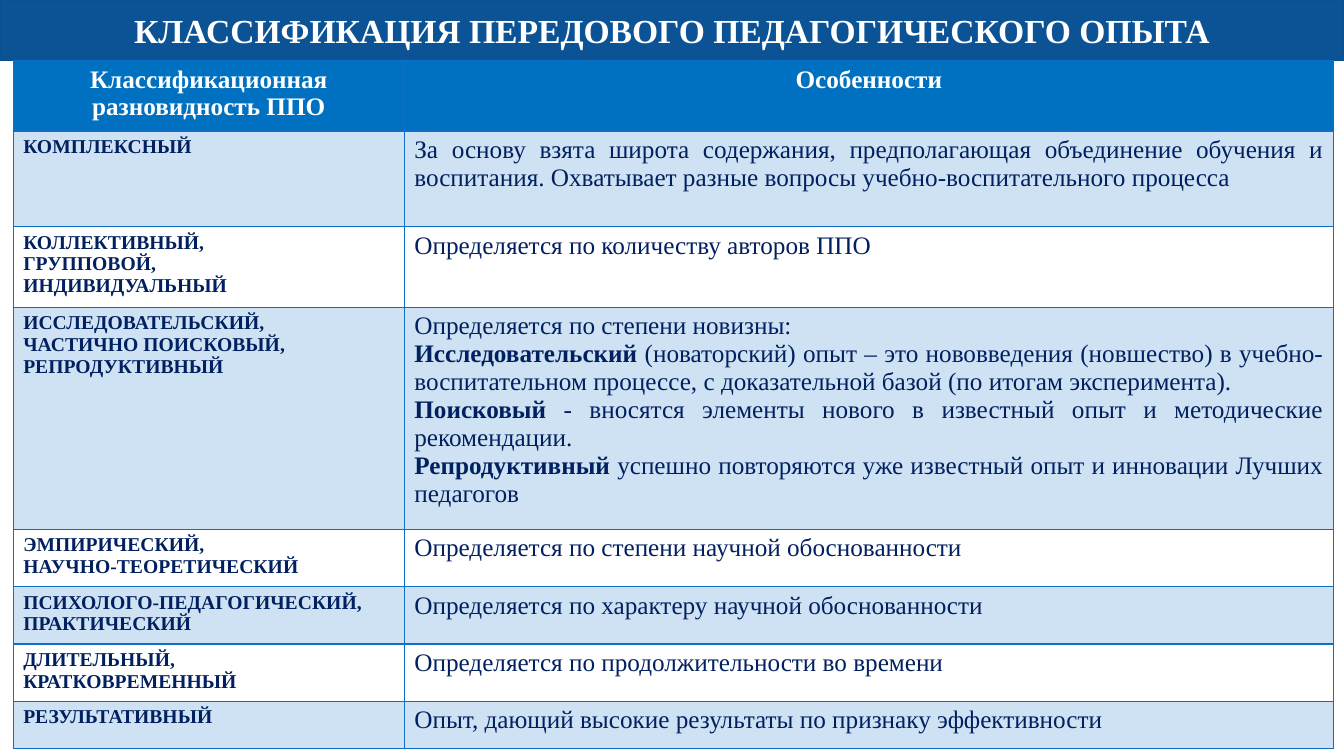
"""Build the slide on the classification of advanced teaching practice."""
from lxml import etree
from pptx import Presentation
from pptx.dml.color import RGBColor
from pptx.enum.shapes import MSO_SHAPE
from pptx.enum.text import MSO_ANCHOR, PP_ALIGN
from pptx.oxml.ns import qn
from pptx.util import Pt

RECTANGLE = MSO_SHAPE.RECTANGLE
MIDDLE = MSO_ANCHOR.MIDDLE
LEFT, CENTER, JUSTIFY = PP_ALIGN.LEFT, PP_ALIGN.CENTER, PP_ALIGN.JUSTIFY

WHITE = RGBColor(0xFF, 0xFF, 0xFF)
NAVY = RGBColor(0x00, 0x20, 0x60)
BANNER = RGBColor(0x0B, 0x53, 0x95)
BANNER_EDGE = RGBColor(0x08, 0x50, 0x91)
HEADER = RGBColor(0x00, 0x70, 0xC0)
ACCENT = RGBColor(0x0F, 0x6F, 0xC6)

TITLE = "КЛАССИФИКАЦИЯ ПЕРЕДОВОГО ПЕДАГОГИЧЕСКОГО ОПЫТА"
HEADINGS = ("Классификационная разновидность ППО", "Особенности")
NOVELTY = "\n".join((
    "Определяется по степени новизны:",
    "**Исследовательский** (новаторский) опыт – это нововведения (новшество) в "
    "учебно-воспитательном процессе, с доказательной базой (по итогам эксперимента).",
    "**Поисковый** - вносятся элементы нового в известный опыт и методические рекомендации.",
    "**Репродуктивный** успешно повторяются уже известный опыт и инновации Лучших педагогов",
))
KINDS = (
    ("КОМПЛЕКСНЫЙ",
     "За основу взята широта содержания, предполагающая объединение обучения и "
     "воспитания. Охватывает разные вопросы учебно-воспитательного процесса"),
    ("КОЛЛЕКТИВНЫЙ,\nГРУППОВОЙ,\nИНДИВИДУАЛЬНЫЙ", "Определяется по количеству авторов ППО"),
    ("ИССЛЕДОВАТЕЛЬСКИЙ,\nЧАСТИЧНО ПОИСКОВЫЙ,\nРЕПРОДУКТИВНЫЙ", NOVELTY),
    ("ЭМПИРИЧЕСКИЙ,\nНАУЧНО-ТЕОРЕТИЧЕСКИЙ", "Определяется по степени научной обоснованности"),
    ("ПСИХОЛОГО-ПЕДАГОГИЧЕСКИЙ,\nПРАКТИЧЕСКИЙ",
     "Определяется по характеру научной обоснованности"),
    ("ДЛИТЕЛЬНЫЙ,\nКРАТКОВРЕМЕННЫЙ", "Определяется по продолжительности во времени"),
    ("РЕЗУЛЬТАТИВНЫЙ", "Опыт, дающий высокие результаты по признаку эффективности"),
)
COLUMN_WIDTHS = (279.4, 663.8)
ROW_HEIGHTS = (50.4, 68.4, 57.6, 158.4, 41, 41, 41, 33.8)


def write(frame, text, font="Times New Roman", size=18, color=NAVY, bold=False, align=LEFT):
    """Fill a text frame, one paragraph a line, with **marked** words in bold."""
    for index, line in enumerate(text.split("\n")):
        para = frame.add_paragraph() if index else frame.paragraphs[0]
        para.alignment = align
        for part, words in enumerate(line.split("**")):
            if words:
                span = para.add_run()
                span.text = words
                span.font.name = font
                span.font.size = Pt(size)
                span.font.color.rgb = color
                span.font.bold = bold or part % 2 == 1


class Slide:
    """Hold the style and the current page."""

    def __init__(self, page, border=ACCENT):
        self.page = page
        self.border = border

    def banner(self, text, left, top, width, height):
        """Add the filled title bar."""
        box = self.page.shapes.add_shape(RECTANGLE, Pt(left), Pt(top), Pt(width), Pt(height))
        box.shadow.inherit = False
        box.fill.solid()
        box.fill.fore_color.rgb = BANNER
        box.line.color.rgb = BANNER_EDGE
        box.line.width = Pt(1)
        box.text_frame.word_wrap = True
        box.text_frame.vertical_anchor = MIDDLE
        write(box.text_frame, text, size=24, color=WHITE, bold=True, align=CENTER)

    def edges(self, cell, top=1, bottom=1):
        """Draw the four borders of a cell."""
        properties = cell._tc.get_or_add_tcPr()
        for side, width in (("L", 1), ("R", 1), ("T", top), ("B", bottom)):
            line = etree.SubElement(properties, qn(f"a:ln{side}"), w=str(Pt(width)))
            paint = etree.SubElement(line, qn("a:solidFill"))
            etree.SubElement(paint, qn("a:srgbClr"), val=str(self.border))

    def tint(self, cell, color, opacity=100):
        """Fill a cell with a colour of the given opacity in percent."""
        cell.fill.solid()
        cell.fill.fore_color.rgb = color
        if opacity < 100:
            tone = cell._tc.tcPr.find(f"{qn('a:solidFill')}/{qn('a:srgbClr')}")
            etree.SubElement(tone, qn("a:alpha"), val=str(opacity * 1000))

    def table(self, headings, rows, left, top, widths, heights):
        """Add the table with a header row and tinted odd rows."""
        grid = self.page.shapes.add_table(
            len(heights), len(widths), Pt(left), Pt(top), Pt(sum(widths)), Pt(sum(heights))
        ).table
        grid.horz_banding = False
        for column, width in zip(grid.columns, widths):
            column.width = Pt(width)
        for row, height in zip(grid.rows, heights):
            row.height = Pt(height)
        for number, texts in enumerate((headings, *rows)):
            for place, text in enumerate(texts):
                cell = grid.cell(number, place)
                self.edges(cell, top=2 if number == 1 else 1, bottom=1 if number else 2)
                if number == 0:
                    self.tint(cell, HEADER)
                    write(cell.text_frame, text, color=WHITE, bold=True, align=CENTER)
                    continue
                if number % 2:
                    self.tint(cell, ACCENT, opacity=20)
                else:
                    cell.fill.background()
                if place == 0:
                    write(cell.text_frame, text, size=14, bold=True)
                else:
                    write(cell.text_frame, text, align=JUSTIFY)


def main():
    """Build and save the deck."""
    deck = Presentation()
    deck.slide_width, deck.slide_height = Pt(960), Pt(540)
    slide = Slide(deck.slides.add_slide(deck.slide_layouts[6]))
    slide.banner(TITLE, 0, 0, 960, 43.2)
    slide.table(HEADINGS, KINDS, 9.4, 43.2, COLUMN_WIDTHS, ROW_HEIGHTS)
    deck.save("out.pptx")


if __name__ == "__main__":
    main()
